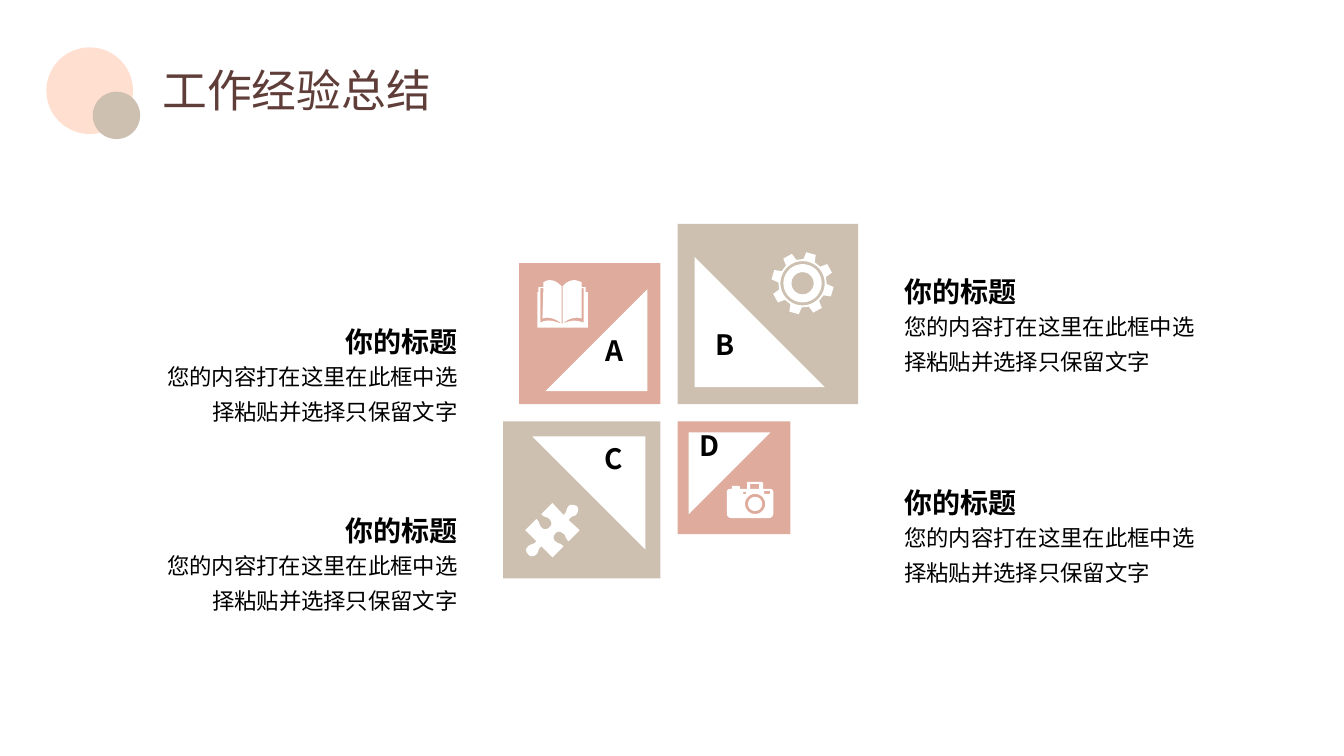
from dataclasses import dataclass
from math import cos, radians, sin

from lxml import etree
from pptx import Presentation, util as u
from pptx.dml.color import RGBColor
from pptx.enum import shapes, text
from pptx.oxml.ns import qn

PX = 9144  # EMU per px, 100 px to the inch
Point = tuple[float, float]
Outline = list[list[Point]]


# Theme
@dataclass(frozen=True)
class Theme:
    font: str = "Noto Sans CJK SC"
    white: str = "FFFFFF"
    black: str = "000000"
    brown: str = "5F3D39"
    peach: str = "FFDFD0"
    rose: str = "DEAB9C"
    sand: str = "CDC0B0"
    title: int = 32
    head: int = 20
    body: int = 16


LOOK = Theme()
LEFT, RIGHT = text.PP_ALIGN.LEFT, text.PP_ALIGN.RIGHT


@dataclass(frozen=True)
class Tile:
    letter: str
    side: int
    color: str
    right: bool
    low: bool
    turn: int
    label: tuple[int, int]
    icon: Outline


@dataclass(frozen=True)
class Note:
    top: int
    right: bool


# Icon outlines
def curve(ends: list[Point], steps: int = 8) -> list[Point]:
    """Points along a cubic curve, without its start."""
    points = []
    for i in range(1, steps + 1):
        t = i / steps
        parts = ((1 - t) ** 3, 3 * t * (1 - t) ** 2, 3 * t * t * (1 - t), t ** 3)
        points.append((sum(p * e[0] for p, e in zip(parts, ends)),
                       sum(p * e[1] for p, e in zip(parts, ends))))
    return points


def trace(path: str) -> Outline:
    """Contours of a path of M, L and C steps given as x,y pairs."""
    outline: Outline = []
    step, held = "", []
    for word in path.split():
        if word in "MLC":
            step = word
            continue
        x, y = word.split(",")
        held.append((float(x), float(y)))
        if step == "M":
            outline.append(held)
        elif step == "L":
            outline[-1] += held
        elif len(held) == 3:
            outline[-1] += curve([outline[-1][-1], *held])
        else:
            continue
        held = []
    return outline


def polar(x: float, y: float, radius: float, angle: float) -> Point:
    turn = radians(angle)
    return x + radius * cos(turn), y + radius * sin(turn)


def ring(x: float, y: float, radius: float) -> list[Point]:
    return [polar(x, y, radius, angle) for angle in range(0, 360, 10)]


def gear(x: float, y: float) -> Outline:
    teeth = [polar(x, y, radius, 16 + 45 * i + shift) for i in range(8)
             for radius, shift in ((24, -14), (31, -9), (31, 9), (24, 14))]
    return [teeth] + [ring(x, y, radius) for radius in (22, 19, 11)]


BOOK = trace(
    "M 557,321 L 558,321 C 566,318 570,317 579,320 L 579,286 577,286 577,316 "
    "C 571,314 564,316 558,321 L 558,284 C 562,280 565,278 570,278 "
    "C 572,278 574,279 577,280 L 577,285 581,285 581,290 583,290 583,325 533,325 "
    "533,290 534,290 534,285 539,285 539,280 C 541,279 543,278 545,278 "
    "C 550,278 553,280 557,284 L 557,321 C 551,316 544,314 538,316 "
    "L 539,286 536,286 536,320 C 545,316 549,319 557,321")
PUZZLE = trace(
    "M 572,502 C 574,504 574,507 572,510 C 570,513 567,511 564,516 "
    "L 575,526 564,537 C 560,534 562,531 558,529 C 556,527 553,527 551,529 "
    "C 549,531 548,535 551,537 C 554,540 555,538 559,542 L 548,553 537,542 "
    "C 533,545 535,547 532,550 C 529,553 525,552 524,550 C 522,548 521,545 523,543 "
    "C 526,539 529,541 532,537 L 521,526 532,515 C 536,518 534,521 538,524 "
    "C 540,526 543,525 545,523 C 547,522 548,518 545,515 C 542,512 540,514 537,510 "
    "L 548,499 559,511 C 563,507 561,506 564,502 C 566,500 570,501 572,502")
CAMERA = trace(
    "M 742,478 L 755,478 C 756,478 757,479 757,480 L 757,485 763,485 "
    "C 765,485 767,486 767,488 L 767,510 C 767,512 765,514 763,514 L 725,514 "
    "C 723,514 721,512 721,510 L 721,488 C 721,486 723,485 725,485 L 726,485 "
    "726,482 733,482 734,483 734,485 741,485 741,480 C 741,479 741,478 742,478 "
    "M 744,480 L 744,485 753,485 753,480 M 737,488 L 737,490 740,490 740,488 "
    "M 758,487 L 758,490 764,490 764,487") + [ring(749, 500, 7), ring(749, 500, 10)]

# Content
TITLE = "工作经验总结"
HEAD = "你的标题"
BODY = "您的内容打在这里在此框中选择粘贴并选择只保留文字"
TILES = [
    Tile("A", 140, LOOK.rose, False, False, 270, (578, 326), BOOK),
    Tile("C", 156, LOOK.sand, False, True, 180, (578, 433), PUZZLE),
    Tile("B", 179, LOOK.sand, True, False, 0, (688, 320), gear(796, 281)),
    Tile("D", 112, LOOK.rose, True, True, 90, (673, 420), CAMERA),
]
NOTES = [Note(251, True), Note(460, True), Note(300, False), Note(488, False)]


# Drawing
def place(shape, x: int, y: int, w: int, h: int) -> None:
    shape.left, shape.top, shape.width, shape.height = (v * PX for v in (x, y, w, h))


def paint(shape, color: str) -> None:
    shape.shadow.inherit = False
    shape.fill.solid()
    shape.fill.fore_color.rgb = RGBColor.from_string(color)
    shape.line.fill.background()


def block(parent, kind, x: int, y: int, side: int, color: str, turn: int = 0) -> None:
    shape = parent.shapes.add_shape(kind, x * PX, y * PX, side * PX, side * PX)
    shape.rotation = turn
    paint(shape, color)


def write(shape, words: str, *, size: int, color: str = LOOK.black, bold: bool = False,
          align=LEFT, space: float = 1.0, anchor=text.MSO_ANCHOR.TOP) -> None:
    frame = shape.text_frame
    frame.word_wrap = True
    frame.auto_size = text.MSO_AUTO_SIZE.NONE
    frame.vertical_anchor = anchor
    para = frame.paragraphs[0]
    para.alignment, para.line_spacing = align, space
    run = para.add_run()
    run.text = words
    font = run.font
    font.name, font.size, font.bold = LOOK.font, u.Pt(size), bold
    font.color.rgb = RGBColor.from_string(color)
    etree.SubElement(run._r.get_or_add_rPr(), qn("a:ea"), typeface=LOOK.font)


def label(parent, words: str, x: int, y: int, w: int, h: int, **style) -> None:
    write(parent.shapes.add_textbox(x * PX, y * PX, w * PX, h * PX), words, **style)


def draw(parent, outline: Outline) -> None:
    first, *rest = [[(x * PX, y * PX) for x, y in line] for line in outline]
    pen = parent.shapes.build_freeform(*first[0])
    pen.add_line_segments(first[1:], close=True)
    for line in rest:
        pen.move_to(*line[0])
        pen.add_line_segments(line[1:], close=True)
    paint(pen.convert_to_shape(), LOOK.white)


def add_tile(slide, tile: Tile) -> None:
    group = slide.shapes.add_group_shape()
    wedge, pad = round(tile.side * 0.72), round(tile.side * 0.094)

    def inner(side: int, gap: int) -> Point:
        return (672 + gap if tile.right else 655 - gap - side,
                418 + gap if tile.low else 401 - gap - side)

    kinds = shapes.MSO_SHAPE
    block(group, kinds.RECTANGLE, *inner(tile.side, 0), tile.side, tile.color)
    block(group, kinds.RIGHT_TRIANGLE, *inner(wedge, pad), wedge, LOOK.white, tile.turn)
    label(group, tile.letter, *tile.label, 62, 44, size=LOOK.head, bold=True,
          align=text.PP_ALIGN.CENTER)
    draw(group, tile.icon)


def add_note(slide, note: Note) -> None:
    group = slide.shapes.add_group_shape()
    align = LEFT if note.right else RIGHT
    for words, drop, w, h, style in (
            (HEAD, 0, 183, 56, dict(size=LOOK.head, bold=True, space=1.5)),
            (BODY, 47, 308, 77, dict(size=LOOK.body, space=1.3))):
        x = 887 if note.right else 464 - w
        label(group, words, x, note.top + drop, w, h, align=align, **style)


def main() -> None:
    deck = Presentation()
    deck.slide_width, deck.slide_height = 1333 * PX, 750 * PX
    slide = deck.slides.add_slide(deck.slide_layouts[5])
    # Heading
    block(slide, shapes.MSO_SHAPE.OVAL, 46, 47, 86, LOOK.peach)
    block(slide, shapes.MSO_SHAPE.OVAL, 92, 91, 47, LOOK.sand)
    title = slide.shapes.title
    place(title, 151, 54, 1150, 76)
    write(title, TITLE, size=LOOK.title, color=LOOK.brown, space=0.9,
          anchor=text.MSO_ANCHOR.MIDDLE)
    # Tiles and notes
    for tile in TILES:
        add_tile(slide, tile)
    for note in NOTES:
        add_note(slide, note)
    deck.save("out.pptx")


if __name__ == "__main__":
    main()
